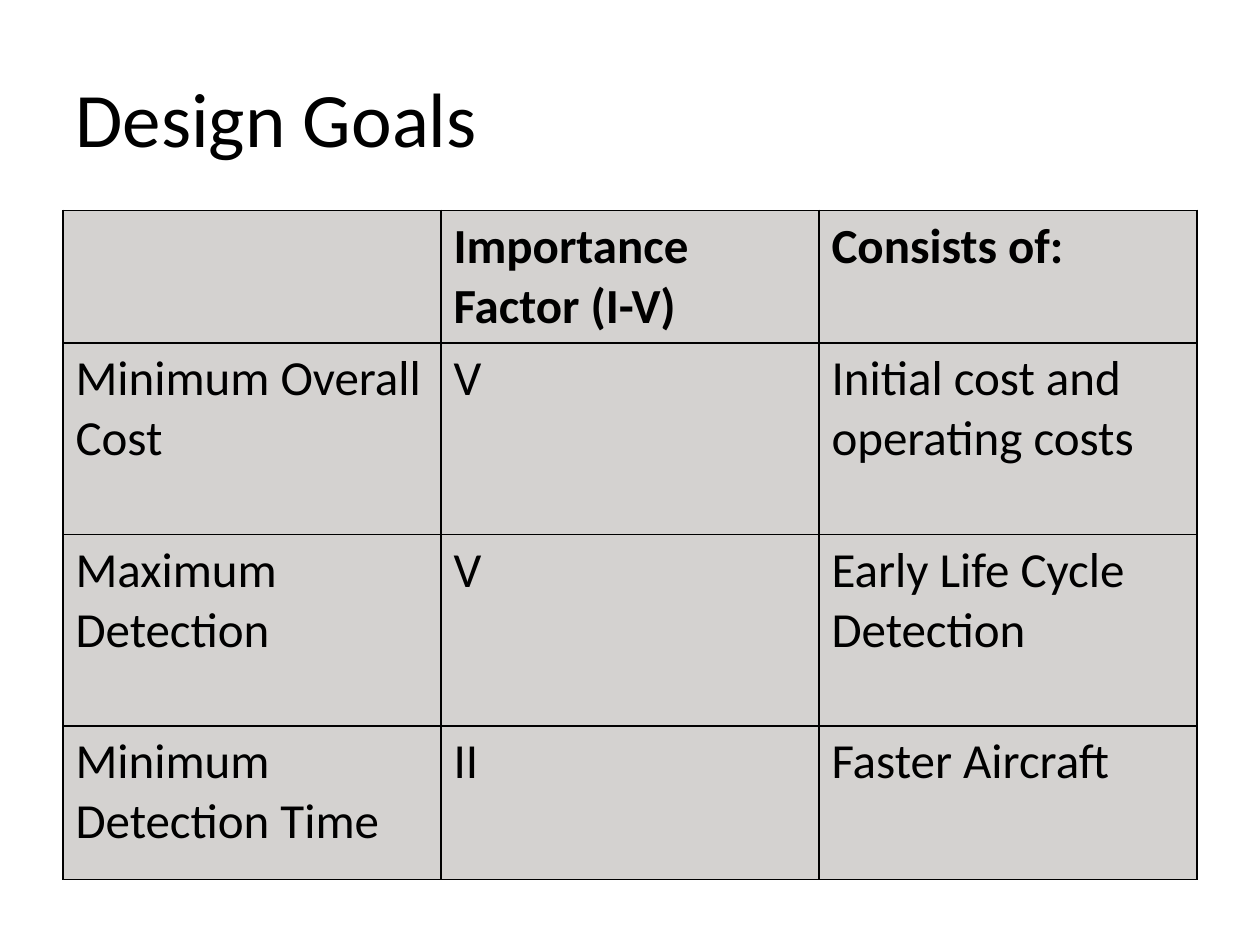
from dataclasses import dataclass

from pptx import Presentation
from pptx.dml.color import RGBColor
from pptx.enum.text import MSO_ANCHOR, PP_ALIGN
from pptx.oxml import parse_xml
from pptx.oxml.ns import nsdecls
from pptx.util import Inches, Pt


@dataclass(frozen=True)
class Theme:
    font: str = "Calibri"
    ink: str = "000000"
    cell_fill: str = "A29D99"
    cell_opacity: int = 46
    title_size: int = 44
    table_size: int = 28
    border_width: int = 1


THEME = Theme()
GOALS = [
    ("", "Importance Factor (I-V)", "Consists of:"),
    ("Minimum Overall Cost", "V", "Initial cost and operating costs"),
    ("Maximum Detection", "V", "Early Life Cycle Detection"),
    ("Minimum Detection Time", "II", "Faster Aircraft"),
]
ROW_HEIGHTS = (1.05, 1.52, 1.52, 1.22)


def format_font(paragraph, size, bold=False):
    formats = {"name": THEME.font, "size": Pt(size), "bold": bold}
    for target in (paragraph.font, *(run.font for run in paragraph.runs)):
        for attribute, value in formats.items():
            setattr(target, attribute, value)
        target.color.rgb = RGBColor.from_string(THEME.ink)


def add_title(slide, text):
    title = slide.shapes.title
    frame = {"left": 0.5, "top": 0.3, "width": 9, "height": 1.25}
    for attribute, value in frame.items():
        setattr(title, attribute, Inches(value))
    title.text_frame.text = text
    title.text_frame.vertical_anchor = MSO_ANCHOR.MIDDLE
    paragraph = title.text_frame.paragraphs[0]
    paragraph.alignment = PP_ALIGN.LEFT
    format_font(paragraph, THEME.title_size)


def style_cell(cell):
    """Give the cell a border on each side and a translucent fill."""
    properties = cell._tc.get_or_add_tcPr()
    for side in ("lnL", "lnR", "lnT", "lnB"):
        properties.append(parse_xml(
            f'<a:{side} {nsdecls("a")} w="{Pt(THEME.border_width)}">'
            f'<a:solidFill><a:srgbClr val="{THEME.ink}"/></a:solidFill></a:{side}>'
        ))
    properties.append(parse_xml(
        f'<a:solidFill {nsdecls("a")}><a:srgbClr val="{THEME.cell_fill}">'
        f'<a:alpha val="{THEME.cell_opacity * 1000}"/></a:srgbClr></a:solidFill>'
    ))


def add_goal_table(slide, goals):
    table = slide.shapes.add_table(
        len(goals), len(goals[0]),
        Inches(0.5), Inches(1.67), Inches(9), Inches(sum(ROW_HEIGHTS)),
    ).table
    table.horz_banding = False
    for row_index, (goal, height) in enumerate(zip(goals, ROW_HEIGHTS)):
        table.rows[row_index].height = Inches(height)
        for column_index, text in enumerate(goal):
            cell = table.cell(row_index, column_index)
            cell.text = text
            format_font(cell.text_frame.paragraphs[0], THEME.table_size,
                        bold=row_index == 0)
            style_cell(cell)


def main():
    presentation = Presentation()
    presentation.slide_width = Inches(10)
    presentation.slide_height = Inches(7.5)
    title_only = presentation.slide_layouts[5]
    slide = presentation.slides.add_slide(title_only)
    add_title(slide, "Design Goals")
    add_goal_table(slide, GOALS)
    presentation.save("out.pptx")


if __name__ == "__main__":
    main()
